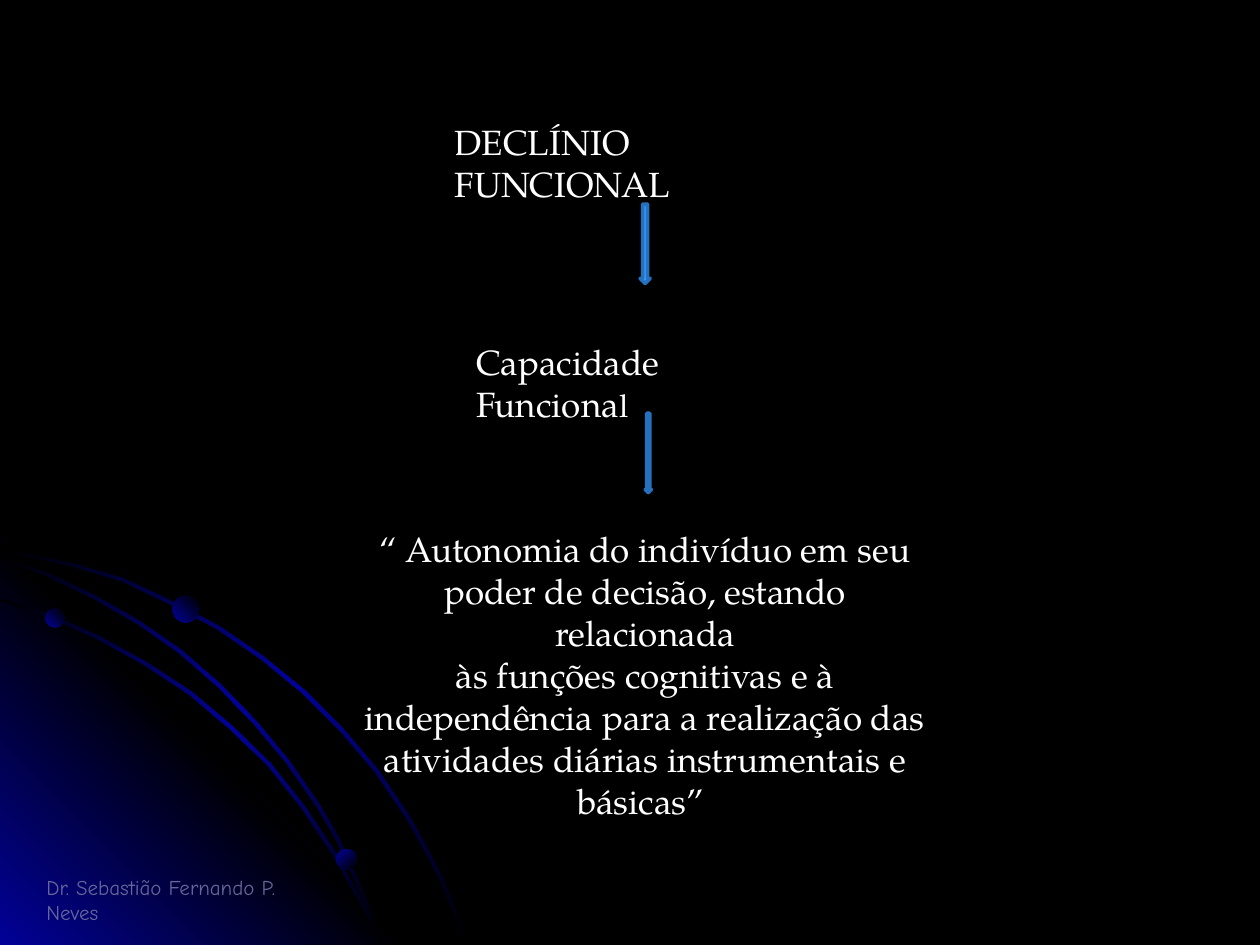
from copy import deepcopy
from dataclasses import dataclass

from pptx import Presentation
from pptx.dml.color import RGBColor as RGB
from pptx.enum.shapes import MSO_SHAPE as SHAPE
from pptx.enum.text import PP_ALIGN as ALIGN
from pptx.util import Inches, Pt


@dataclass(frozen=True)
class Theme:
    black: str = "000000"
    blue: str = "010199"
    white: str = "FFFFFF"
    muted: str = "666699"
    arrow: str = "3399FF"
    arrow_line: str = "2671BD"
    serif: str = "TeX Gyre Pagella"
    casual: str = "Comic Neue"
    body: int = 20
    credit: int = 12


T = Theme()


def add_text(text, x, y, w, h, size=T.body, font=T.serif, color=T.white, align=ALIGN.LEFT):
    tf = s.shapes.add_textbox(Inches(x), Inches(y), Inches(w), Inches(h)).text_frame
    tf.word_wrap = True
    for i, line in enumerate(text.split("\n")):
        p = tf.paragraphs[0] if i == 0 else tf.add_paragraph()
        p.alignment = align
        r = p.add_run()
        r.text = line
        r.font.size, r.font.name = Pt(size), font
        r.font.color.rgb = RGB.from_string(color)
    return tf


def paint_gradient(sp, colors, angle):
    """Spread the colours evenly; the angle runs counter-clockwise."""
    sp.shadow.inherit = False
    sp.line.fill.background()
    sp.fill.gradient()
    sp.fill.gradient_angle = angle
    stops = sp._element.spPr.find(".//{*}gsLst")
    for _ in colors[2:]:
        stops.append(deepcopy(stops[-1]))
    for i, (stop, color) in enumerate(zip(sp.fill.gradient_stops, colors)):
        stop.position = i / (len(colors) - 1)
        stop.color.rgb = RGB.from_string(color)


prs = Presentation()
prs.slide_width, prs.slide_height = Inches(10), Inches(7.5)
s = prs.slides.add_slide(prs.slide_layouts[6])
s.background.fill.solid()
s.background.fill.fore_color.rgb = RGB.from_string(T.black)

# Corner glow and orbits: each orbit is an arc given a thin, constant width
outer_orbit = [(0, 4.35), (0.57, 4.47), (0.98, 4.59), (1.36, 4.77), (1.74, 4.97),
               (2.09, 5.21), (2.42, 5.48), (2.72, 5.78), (3, 6.11), (3.25, 6.48),
               (3.39, 6.73), (3.52, 6.98), (3.62, 7.23), (3.72, 7.49)]
inner_orbit = [(0, 4.75), (0.41, 4.88), (0.79, 5.05), (1.17, 5.26), (1.52, 5.49),
               (1.84, 5.76), (2.15, 6.06), (2.42, 6.4), (2.66, 6.76), (2.86, 7.12),
               (2.96, 7.3), (3.03, 7.49)]
middle_orbit = [(0, 4.42), (0.39, 4.55), (0.76, 4.73), (1.11, 4.93), (1.44, 5.16),
                (1.75, 5.43), (2.04, 5.73), (2.29, 6.03), (2.54, 6.39), (2.69, 6.65),
                (2.82, 6.93), (2.94, 7.2), (3.03, 7.49)]
glow = [(3.22, 7.5), (0, 7.5), (0, 4.27)]

outlines = []
for arc in (outer_orbit, inner_orbit, middle_orbit):
    inside = [(max(0, x - 0.02), min(7.49, y + 0.02)) for x, y in reversed(arc)]
    outlines.append((arc + inside, (T.black, T.blue, T.black), 315))
outlines.insert(1, (glow, (T.blue, T.black, T.blue), 45))

for points, colors, angle in outlines:
    points = [(Inches(x), Inches(y)) for x, y in points]
    path = s.shapes.build_freeform(*points[0])
    path.add_line_segments(points[1:])
    paint_gradient(path.convert_to_shape(), colors, angle)

# Planets
for x, y, size, angle in [(0.36, 4.83, 0.15, 45), (2.67, 6.74, 0.16, 315),
                          (1.37, 4.73, 0.21, 45)]:
    sp = s.shapes.add_shape(SHAPE.OVAL, Inches(x), Inches(y), Inches(size), Inches(size))
    paint_gradient(sp, (T.blue, T.black), angle)

# Steps, definition and credit
add_text("DECLÍNIO FUNCIONAL", 3.51, 0.91, 3.23, 0.44)
tf = add_text("Capacidade Funciona", 3.68, 2.65, 2.87, 0.44)
r = tf.paragraphs[0].add_run()
r.text = "l"
r.font.size, r.font.name = Pt(18), T.serif
r.font.color.rgb = RGB.from_string(T.white)
add_text("“ Autonomia do indivíduo em seu poder de decisão, estando relacionada\n"
         "às funções cognitivas e à independência para a realização das "
         "atividades diárias instrumentais e básicas” ",
         2.69, 4.14, 4.86, 2.12, align=ALIGN.CENTER)
add_text("Dr. Sebastião Fernando P. Neves", 0.27, 6.89, 2.09, 0.3,
         size=T.credit, font=T.casual, color=T.muted)

# Arrows between the steps
for x, y, w in [(5.08, 1.62, 0.08), (5.12, 3.28, 0.05)]:
    sp = s.shapes.add_shape(SHAPE.DOWN_ARROW, Inches(x), Inches(y), Inches(w), Inches(0.63))
    sp.shadow.inherit = False
    sp.fill.solid()
    sp.fill.fore_color.rgb = RGB.from_string(T.arrow)
    sp.line.color.rgb = RGB.from_string(T.arrow_line)
    sp.line.width = Pt(2)

prs.save("out.pptx")
